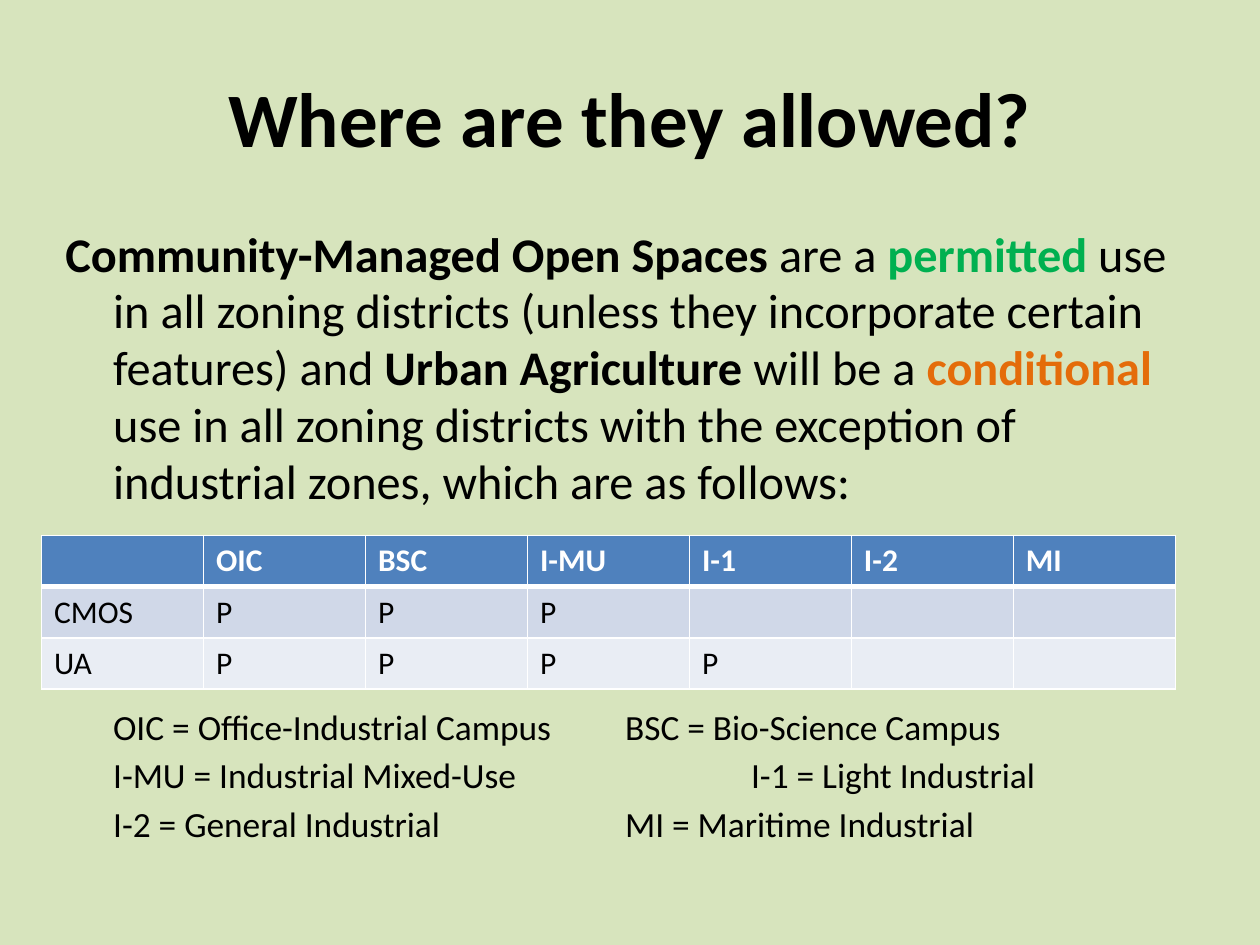
from lxml import etree
from pptx import Presentation
from pptx.dml.color import RGBColor
from pptx.enum import text
from pptx.oxml import ns
from pptx.util import Inches, Pt

BACKGROUND = RGBColor(0xD7, 0xE4, 0xBD)
BLACK = RGBColor(0, 0, 0)
WHITE = RGBColor(0xFF, 0xFF, 0xFF)
GREEN = RGBColor(0x00, 0xB0, 0x50)
ORANGE = RGBColor(0xE4, 0x6C, 0x0A)
HEADER_BLUE = RGBColor(0x4F, 0x81, 0xBD)
BAND_COLORS = [RGBColor(0xD0, 0xD8, 0xE8), RGBColor(0xE9, 0xED, 0xF4)]
FONT = "Calibri"

ZONING_ROWS = [
    ["", "OIC", "BSC", "I-MU", "I-1", "I-2", "MI"],
    ["CMOS", "P", "P", "P", "", "", ""],
    ["UA", "P", "P", "P", "P", "", ""],
]
INTRO_RUNS = [
    ("Community-Managed Open Spaces ", True, BLACK),
    ("are a ", False, BLACK),
    ("permitted", True, GREEN),
    (" use in all zoning districts (unless they incorporate certain features) and", False, BLACK),
    (" Urban Agriculture ", True, BLACK),
    ("will be a ", False, BLACK),
    ("conditional", True, ORANGE),
    (" use in all zoning districts with the exception of industrial zones, "
     "which are as follows:", False, BLACK),
]
LEGEND_LINES = [
    "\tOIC = Office-Industrial Campus\t BSC = Bio-Science Campus",
    "\tI-MU = Industrial Mixed-Use\t\t I-1 = Light Industrial",
    "\tI-2 = General Industrial\t\t MI = Maritime Industrial",
]


def style_font(font, size, color, bold=False):
    """Apply the slide's typeface with a size, colour and weight."""
    font.name = FONT
    font.size = Pt(size)
    font.color.rgb = color
    font.bold = bold


def add_title(slide, title_text):
    """Place and format the title placeholder."""
    title = slide.shapes.title
    title.left, title.top = Inches(0.5), Inches(0.3)
    title.width, title.height = Inches(9), Inches(1.25)
    frame = title.text_frame
    frame.text = title_text
    frame.vertical_anchor = text.MSO_ANCHOR.MIDDLE
    paragraph = frame.paragraphs[0]
    paragraph.alignment = text.PP_ALIGN.CENTER
    style_font(paragraph.font, 44, BLACK, True)


def set_borders(cell, top, bottom):
    """Draw white cell borders with the given top and bottom widths."""
    properties = cell._tc.get_or_add_tcPr()
    for side, width in (("L", 1), ("R", 1), ("T", top), ("B", bottom)):
        line = etree.SubElement(properties, ns.qn(f"a:ln{side}"), w=str(Pt(width)))
        fill = etree.SubElement(line, ns.qn("a:solidFill"))
        etree.SubElement(fill, ns.qn("a:srgbClr"), val=str(WHITE))


def add_zoning_table(slide):
    """Add the table of uses by industrial zone."""
    row_count, column_count = len(ZONING_ROWS), len(ZONING_ROWS[0])
    table = slide.shapes.add_table(
        row_count, column_count, Inches(0.33), Inches(4.25), Inches(9), Inches(1.22)
    ).table
    for row_index, values in enumerate(ZONING_ROWS):
        header = row_index == 0
        for column_index, value in enumerate(values):
            cell = table.cell(row_index, column_index)
            set_borders(cell, 3 if row_index == 1 else 1, 3 if header else 1)
            cell.fill.solid()
            cell.fill.fore_color.rgb = HEADER_BLUE if header else BAND_COLORS[row_index - 1]
            cell.text = value
            style_font(cell.text_frame.paragraphs[0].font, 18,
                       WHITE if header else BLACK, header)


def format_paragraph(paragraph, space_before):
    """Set the hanging indent, tab size and spacing of a paragraph."""
    paragraph.space_before = Pt(space_before)
    paragraph.line_spacing = 0.985
    properties = paragraph._p.get_or_add_pPr()
    properties.set("marL", str(Inches(0.38)))
    properties.set("indent", str(-Inches(0.38)))
    properties.set("defTabSz", str(Inches(1)))


def add_body(slide):
    """Add the introduction and the legend of zone names."""
    box = slide.shapes.add_textbox(Inches(0.42), Inches(1.75), Inches(9), Inches(5.42))
    frame = box.text_frame
    frame.word_wrap = True
    intro = frame.paragraphs[0]
    format_paragraph(intro, 1.5)
    for words, bold, color in INTRO_RUNS:
        run = intro.add_run()
        run.text = words
        style_font(run.font, 27.6, color, bold)
    for index, line in enumerate(LEGEND_LINES):
        paragraph = frame.add_paragraph()
        paragraph.text = line
        format_paragraph(paragraph, 4 if index else 112)
        style_font(paragraph.font, 20.2, BLACK)


def main():
    """Build and save the slide."""
    presentation = Presentation()
    presentation.slide_width, presentation.slide_height = Inches(10), Inches(7.5)
    slide = presentation.slides.add_slide(presentation.slide_layouts[5])
    slide.background.fill.solid()
    slide.background.fill.fore_color.rgb = BACKGROUND
    add_title(slide, "Where are they allowed?")
    add_zoning_table(slide)
    add_body(slide)
    presentation.save("out.pptx")


main()
